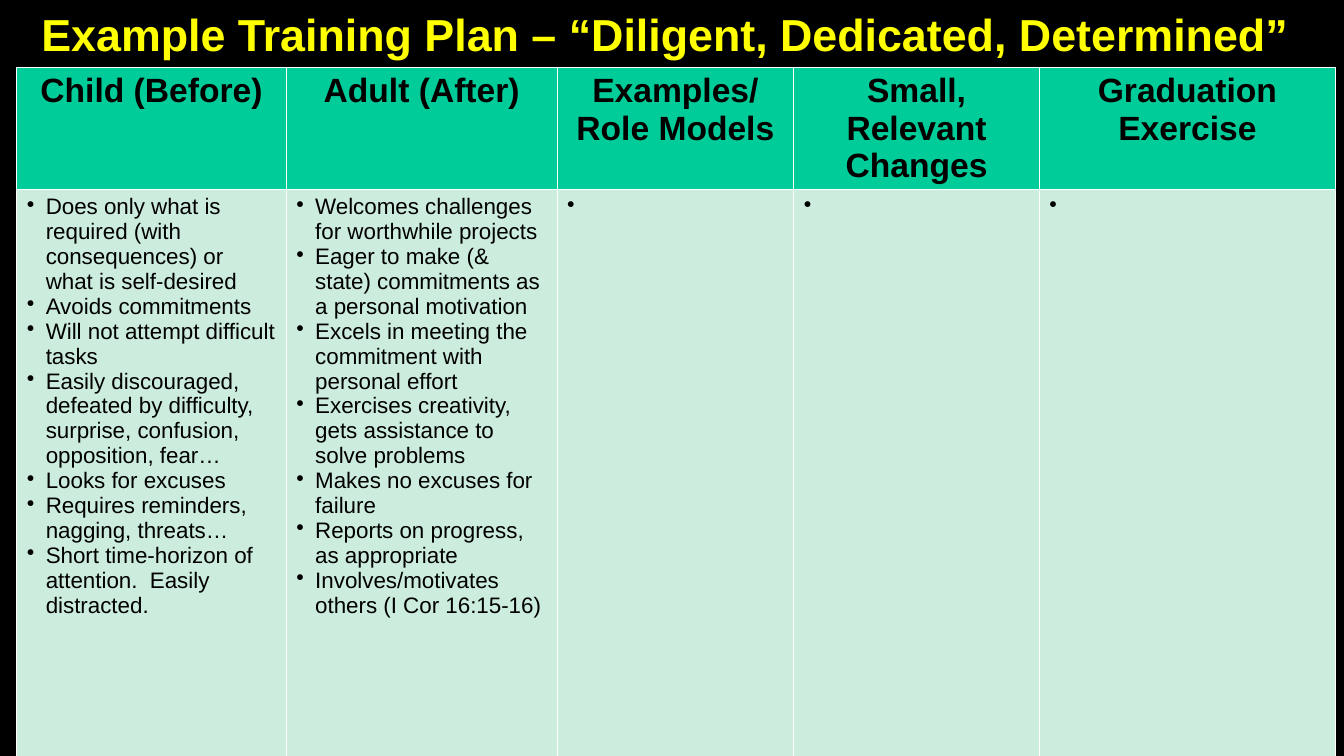
import pptx
import pptx.dml.color
import pptx.enum.text
import pptx.oxml
import pptx.util

Pt = pptx.util.Pt
PP_ALIGN = pptx.enum.text.PP_ALIGN
MSO_ANCHOR = pptx.enum.text.MSO_ANCHOR
A_NS = "http://schemas.openxmlformats.org/drawingml/2006/main"


def paint(target, color):
    target.solid()
    target.fore_color.rgb = pptx.dml.color.RGBColor.from_string(color)


def style(p, size, color, bold):
    p.font.name = "Arial"
    p.font.size = Pt(size)
    p.font.bold = bold
    paint(p.font.fill, color)


columns = [
    ("Child (Before)", 192.5, [
        "Does only what is required (with consequences) or what is self-desired",
        "Avoids commitments",
        "Will not attempt difficult tasks",
        "Easily discouraged, defeated by difficulty, surprise, confusion, opposition, fear…",
        "Looks for excuses",
        "Requires reminders, nagging, threats…",
        "Short time-horizon of attention.  Easily distracted.",
    ]),
    ("Adult (After)", 193.5, [
        "Welcomes challenges for worthwhile projects",
        "Eager to make (& state) commitments as a personal motivation",
        "Excels in meeting the commitment with personal effort",
        "Exercises creativity, gets assistance to solve problems",
        "Makes no excuses for failure",
        "Reports on progress, as appropriate",
        "Involves/motivates others (I Cor 16:15-16)",
    ]),
    ("Examples/Role Models", 169, [" "]),
    ("Small, Relevant Changes", 175.5, [" "]),
    ("Graduation Exercise", 211.5, [" "]),
]

prs = pptx.Presentation()
prs.slide_width = Pt(960)
prs.slide_height = Pt(540)
s = prs.slides.add_slide(prs.slide_layouts[5])
paint(s.background.fill, "000000")

title = s.shapes.title
title.left, title.top, title.width, title.height = Pt(0), Pt(0), Pt(960), Pt(48)
tf = title.text_frame
tf.text = "Example Training Plan – “Diligent, Dedicated, Determined” "
tf.auto_size = pptx.enum.text.MSO_AUTO_SIZE.NONE
tf.vertical_anchor = MSO_ANCHOR.MIDDLE
tf.paragraphs[0].alignment = PP_ALIGN.CENTER
style(tf.paragraphs[0], 32, "FFFF00", True)

width = sum(column[1] for column in columns)
table = s.shapes.add_table(2, len(columns), Pt(12), Pt(48), Pt(width), Pt(479)).table
table.rows[0].height = Pt(48)
table.rows[1].height = Pt(431)

for i, (heading, column_width, traits) in enumerate(columns):
    table.columns[i].width = Pt(column_width)

    header = table.cell(0, i)
    paint(header.fill, "00CC99")
    header.text = heading
    p = header.text_frame.paragraphs[0]
    p.alignment = PP_ALIGN.CENTER
    style(p, 24, "000000", True)

    body = table.cell(1, i)
    paint(body.fill, "CCECDE")
    body.text = "\n".join(traits)
    for p in body.text_frame.paragraphs:
        style(p, 16, "000000", False)
        pPr = p._p.get_or_add_pPr()
        pPr.set("marL", str(Pt(13.5)))
        pPr.set("indent", str(-Pt(13.5)))
        bullet = pptx.oxml.parse_xml(f'<a:buChar xmlns:a="{A_NS}" char="•"/>')
        pPr.insert(0, bullet)

prs.save("out.pptx")
